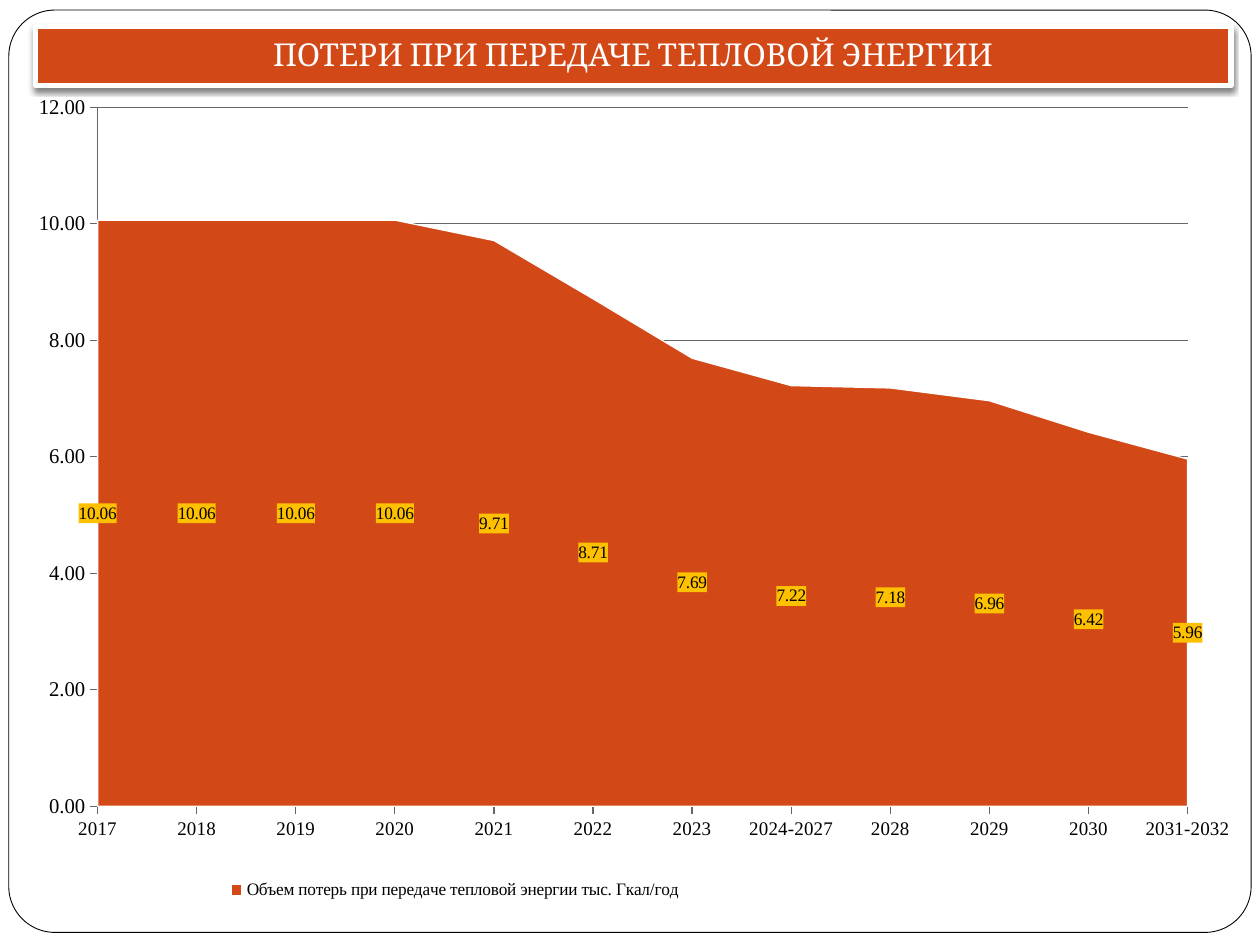
from dataclasses import dataclass
from lxml import etree
from pptx import Presentation
from pptx.chart.data import CategoryChartData
from pptx.dml.color import RGBColor
from pptx.enum.chart import XL_CHART_TYPE, XL_LEGEND_POSITION, XL_TICK_MARK
from pptx.enum.shapes import MSO_SHAPE
from pptx.enum.text import MSO_ANCHOR, PP_ALIGN
from pptx.oxml import parse_xml
from pptx.oxml.ns import qn
from pptx.util import Inches, Pt

AREA = XL_CHART_TYPE.AREA
RIGHT = XL_LEGEND_POSITION.RIGHT
CROSS, NONE = XL_TICK_MARK.CROSS, XL_TICK_MARK.NONE
ROUND = MSO_SHAPE.ROUNDED_RECTANGLE
BOTTOM, CENTER = MSO_ANCHOR.BOTTOM, PP_ALIGN.CENTER

YEARS = ["2017", "2018", "2019", "2020", "2021", "2022", "2023",
         "2024-2027", "2028", "2029", "2030", "2031-2032"]
LOSSES = [10.06, 10.06, 10.06, 10.06, 9.71, 8.71,
          7.69, 7.22, 7.18, 6.96, 6.42, 5.96]
NAME = "Объем потерь при передаче тепловой энергии тыс. Гкал/год"
TITLE = "ПОТЕРИ ПРИ ПЕРЕДАЧЕ ТЕПЛОВОЙ ЭНЕРГИИ"


@dataclass
class Theme:
    """Colours, fonts and type sizes."""
    main: str = "D34817"
    white: str = "FFFFFF"
    black: str = "000000"
    grid: str = "666666"
    label: str = "FFC000"
    head: str = "Cambria"
    body: str = "Times New Roman"
    title: int = 18
    value: int = 12
    year: int = 11
    small: int = 10


def apply(obj, vals):
    """Set each attribute of obj from a dict."""
    for key, val in vals.items():
        setattr(obj, key, val)


class Deck:
    """Draw styled elements on the current slide."""

    def __init__(self, theme):
        """Start a deck with one title-only slide."""
        self.theme = theme
        self.prs = Presentation()
        apply(self.prs, {"slide_width": Inches(10), "slide_height": Inches(7.5)})
        self.slide = self.prs.slides.add_slide(self.prs.slide_layouts[5])

    def font(self, font, size, name, color):
        """Style a font."""
        apply(font, {"size": Pt(size), "name": name, "bold": False})
        font.color.rgb = RGBColor.from_string(color)

    def fill(self, obj, color):
        """Give obj a solid fill."""
        obj.fill.solid()
        obj.fill.fore_color.rgb = RGBColor.from_string(color)

    def line(self, line, color, width):
        """Style a line."""
        line.color.rgb = RGBColor.from_string(color)
        line.width = Pt(width)

    def frame(self, box, round_by):
        """Draw the rounded page frame behind everything."""
        shape = self.slide.shapes.add_shape(ROUND, *map(Inches, box))
        shape.adjustments[0] = round_by
        shape.shadow.inherit = False
        self.fill(shape, self.theme.white)
        self.line(shape.line, self.theme.black, 0.5)
        self.slide.shapes._spTree.insert(2, shape._element)

    def title(self, text, box):
        """Place the title as a shadowed banner."""
        look, shape = self.theme, self.slide.shapes.title
        apply(shape, dict(zip(("left", "top", "width", "height"), map(Inches, box))))
        self.fill(shape, look.main)
        self.line(shape.line, look.white, 3)
        self.shade(shape)
        frame = shape.text_frame
        apply(frame, {"text": text, "word_wrap": True, "vertical_anchor": BOTTOM,
                      "margin_left": Inches(0.1), "margin_right": Inches(0.1),
                      "margin_top": Inches(0.05), "margin_bottom": Inches(0.1)})
        para = frame.paragraphs[0]
        para.alignment = CENTER
        self.font(para.runs[0].font, look.title, look.head, look.white)

    def shade(self, shape):
        """Add a soft shadow below a shape."""
        shape.shadow.inherit = False
        glow = shape._element.spPr.find(qn("a:effectLst"))
        outer = etree.SubElement(glow, qn("a:outerShdw"), blurRad=str(Pt(3)),
                                 dist=str(Pt(2)), dir="5400000", rotWithShape="0")
        tint = etree.SubElement(outer, qn("a:srgbClr"), val=self.theme.black)
        etree.SubElement(tint, qn("a:alpha"), val="50000")

    def layout(self, part, index, box, inner=False):
        """Pin a chart part by fractions of the chart."""
        for old in part.findall(qn("c:layout")):
            part.remove(old)
        rows = [("layoutTarget", "inner")] if inner else []
        rows += [("xMode", "edge"), ("yMode", "edge"), *zip("xywh", box)]
        body = "".join(f'<c:{tag} val="{val}"/>' for tag, val in rows)
        space = "http://schemas.openxmlformats.org/drawingml/2006/chart"
        part.insert(index, parse_xml(
            f'<c:layout xmlns:c="{space}"><c:manualLayout>{body}'
            '</c:manualLayout></c:layout>'))

    def axis(self, axis, size):
        """Style an axis."""
        apply(axis, {"major_tick_mark": CROSS, "minor_tick_mark": NONE})
        self.line(axis.format.line, self.theme.grid, 0.75)
        self.font(axis.tick_labels.font, size, self.theme.body, self.theme.black)

    def area(self, box, plot_box, key_box):
        """Draw the area chart of losses."""
        look, data = self.theme, CategoryChartData(number_format="0.00")
        data.categories = YEARS
        data.add_series(NAME, LOSSES)
        chart = self.slide.shapes.add_chart(AREA, *map(Inches, box), data).chart
        apply(chart, {"has_title": False, "has_legend": True})
        self.font(chart.font, look.small, look.body, look.black)

        self.axis(chart.category_axis, look.year)
        axis = chart.value_axis
        self.axis(axis, look.value)
        apply(axis, {"minimum_scale": 0, "maximum_scale": 12, "major_unit": 2,
                     "has_major_gridlines": True})
        self.line(axis.major_gridlines.format.line, look.grid, 0.75)
        apply(axis.tick_labels,
              {"number_format": "0.00", "number_format_is_linked": False})

        plot = chart.plots[0]
        plot.vary_by_categories = False
        form = plot.series[0].format
        self.fill(form, look.main)
        self.line(form.line, look.white, 0.75)
        self.labels(plot.series[0].data_labels)
        self.layout(chart._chartSpace.chart.plotArea, 0, plot_box, True)

        key = chart.legend
        apply(key, {"position": RIGHT, "include_in_layout": False})
        self.font(key.font, look.small, look.body, look.black)
        self.layout(key._element, 1, key_box)

    def labels(self, labels):
        """Show values on filled labels."""
        apply(labels, {"show_value": True, "number_format": "0.00",
                       "number_format_is_linked": False})
        self.font(labels.font, self.theme.small, self.theme.body, self.theme.black)
        space = "http://schemas.openxmlformats.org/drawingml/2006/"
        part = parse_xml(
            f'<c:spPr xmlns:c="{space}chart" xmlns:a="{space}main"><a:solidFill>'
            f'<a:srgbClr val="{self.theme.label}"/></a:solidFill></c:spPr>')
        labels._element.find(qn("c:txPr")).addprevious(part)


def main():
    """Build and save the slide."""
    deck = Deck(Theme())
    deck.frame((0.07, 0.08, 9.86, 7.32), 0.05)
    deck.title(TITLE, (0.28, 0.21, 9.49, 0.47))
    deck.area((0.23, 0.7, 9.53, 6.56), (0.058, 0.023, 0.921, 0.846),
              (0.11, 0.95, 0.5, 0.04))
    deck.prs.save("out.pptx")


if __name__ == "__main__":
    main()
